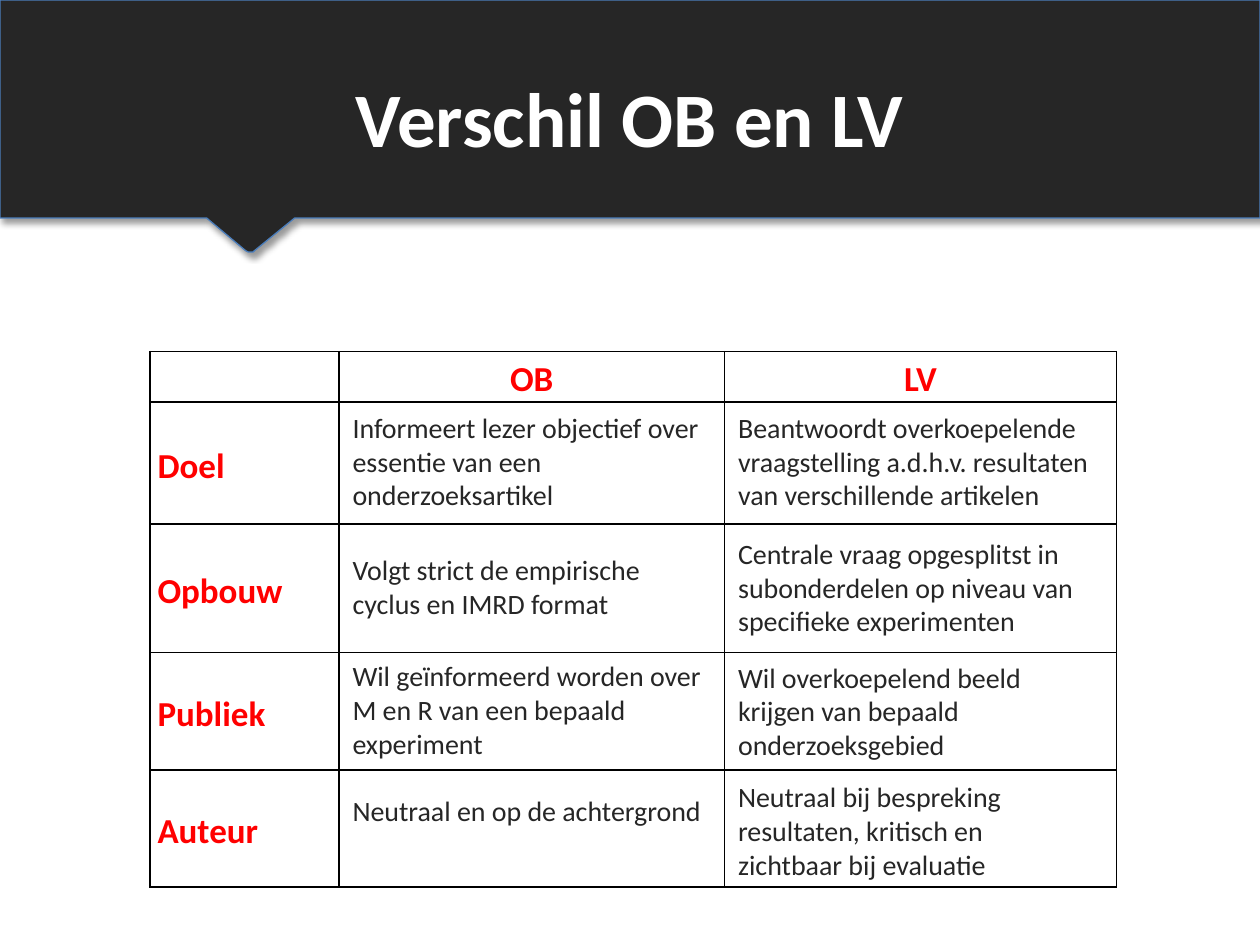
"""Builds a slide that sets OB and LV side by side in a table under a dark banner."""
from dataclasses import dataclass
from typing import Any, NamedTuple

from lxml import etree
from pptx import Presentation, util as u
from pptx.dml.color import RGBColor
from pptx.enum import text
from pptx.oxml.ns import qn


@dataclass(frozen=True)
class Theme:
    """Colours, font and type sizes."""
    dark: str = "262626"
    edge: str = "4B7EBC"
    red: str = "FF0000"
    white: str = "FFFFFF"
    black: str = "000000"
    font: str = "Calibri"
    title: int = 44
    head: int = 20
    body: int = 16


class Note(NamedTuple):
    """A text box: left, top, height and words."""
    left: float
    top: float
    high: float
    words: str


LOOK = Theme()
OB, LV = 2.7, 5.76
COLS = [1.5, 3.06, 3.11]
ROWS = [0.36, 0.97, 1.02, 0.93, 0.93]
HEADS = ["OB", "LV"]
SIDES = ["Doel", "Opbouw", "Publiek", "Auteur"]
EDGE = [(10, 0), (0, 0), (0, 1.73), (1.64, 1.73), (1.95, 1.99), (1.97, 2),
        (2.01, 2), (2.02, 1.99), (2.34, 1.73), (10, 1.73)]
NOTES = [
    Note(OB, 3.21, 0.91, "Informeert lezer objectief over essentie van een onderzoeksartikel"),
    Note(LV, 3.21, 0.91, "Beantwoordt overkoepelende vraagstelling a.d.h.v. resultaten "
                         "van verschillende artikelen"),
    Note(OB, 4.34, 0.64, "Volgt strict de empirische cyclus en IMRD format"),
    Note(LV, 4.21, 0.91, "Centrale vraag opgesplitst in subonderdelen op niveau van "
                         "specifieke experimenten"),
    Note(OB, 5.18, 0.91, "Wil geïnformeerd worden over M en R van een bepaald experiment"),
    Note(LV, 5.19, 0.91, "Wil overkoepelend beeld krijgen van bepaald onderzoeksgebied"),
    Note(OB, 6.25, 0.37, "Neutraal en op de achtergrond"),
    Note(LV, 6.14, 0.91, "Neutraal bij bespreking resultaten, kritisch en zichtbaar "
                         "bij evaluatie"),
]


def put(item: Any, vals: dict[str, Any]) -> None:
    """Set each named value on the item."""
    for name, val in vals.items():
        setattr(item, name, val)


def node(root: Any, tag: str, **vals: str) -> Any:
    """Add a child element with attributes."""
    return etree.SubElement(root, qn(tag), vals)


def write(frame: Any, words: str, size: int, tint: str, bold: bool = False,
          **form: Any) -> None:
    """Write one styled paragraph."""
    para = frame.paragraphs[0]
    put(para, form)
    run = para.add_run()
    run.text = words
    put(run.font, {"name": LOOK.font, "size": u.Pt(size), "bold": bold})
    run.font.color.rgb = RGBColor.from_string(tint)


def banner(slide: Any) -> None:
    """Draw the dark band with its pointer and shadow."""
    pts = [(u.Inches(x), u.Inches(y)) for x, y in EDGE]
    pen = slide.shapes.build_freeform(*pts[0])
    pen.add_line_segments(pts[1:], close=True)
    band = pen.convert_to_shape()
    band.fill.solid()
    band.fill.fore_color.rgb = RGBColor.from_string(LOOK.dark)
    band.line.width = u.Pt(0.75)
    band.line.color.rgb = RGBColor.from_string(LOOK.edge)
    band.shadow.inherit = False
    glow = band._element.spPr.find(qn("a:effectLst"))
    shade = node(glow, "a:outerShdw", blurRad=str(u.Pt(4)), dist=str(u.Pt(3)),
                 dir="2700000", algn="tl", rotWithShape="0")
    tint = node(shade, "a:srgbClr", val=LOOK.black)
    node(tint, "a:alpha", val="40000")


def box(slide: Any, left: float, top: float, wide: float, high: float) -> Any:
    """Add a wrapping text box and return its frame."""
    frame = slide.shapes.add_textbox(
        *(u.Inches(n) for n in (left, top, wide, high))).text_frame
    frame.word_wrap = True
    return frame


def frame_cell(cell: Any) -> None:
    """Clear the fill and draw black borders round a cell."""
    cell.fill.background()
    props = cell._tc.get_or_add_tcPr()
    for spot, side in enumerate("LRTB"):
        line = node(props, f"a:ln{side}", w=str(u.Pt(1)))
        node(node(line, "a:solidFill"), "a:srgbClr", val=LOOK.black)
        props.insert(spot, line)


def label(cell: Any, words: str, **form: Any) -> None:
    """Write a red label in a cell."""
    pad = u.Inches(0.06)
    put(cell, {"margin_left": pad, "margin_right": pad,
               "margin_top": 0, "margin_bottom": 0})
    write(cell.text_frame, words, LOOK.head, LOOK.red, True,
          line_spacing=1.15, **form)


def grid(slide: Any) -> None:
    """Draw the table with its column and row labels."""
    table = slide.shapes.add_table(
        len(ROWS), len(COLS), u.Inches(1.19), u.Inches(2.79),
        u.Inches(sum(COLS)), u.Inches(sum(ROWS))).table
    put(table, {"first_row": False, "horz_banding": False})
    for col, wide in zip(table.columns, COLS):
        col.width = u.Inches(wide)
    for row, high in zip(table.rows, ROWS):
        row.height = u.Inches(high)
    for cell in table.iter_cells():
        frame_cell(cell)
    for col, words in enumerate(HEADS, 1):
        label(table.cell(0, col), words, alignment=text.PP_ALIGN.CENTER)
    for row, words in enumerate(SIDES, 1):
        cell = table.cell(row, 0)
        cell.vertical_anchor = text.MSO_ANCHOR.MIDDLE
        label(cell, words)


def main() -> None:
    """Build and save the slide."""
    deck = Presentation()
    put(deck, {"slide_width": u.Inches(10), "slide_height": u.Inches(7.5)})
    slide = deck.slides.add_slide(deck.slide_layouts[6])
    banner(slide)
    title = box(slide, 0.5, 0.3, 9, 1.25)
    title.vertical_anchor = text.MSO_ANCHOR.MIDDLE
    write(title, "Verschil OB en LV", LOOK.title, LOOK.white, True,
          alignment=text.PP_ALIGN.CENTER)
    grid(slide)
    for note in NOTES:
        frame = box(slide, note.left, note.top, 3, note.high)
        frame.auto_size = text.MSO_AUTO_SIZE.SHAPE_TO_FIT_TEXT
        write(frame, note.words, LOOK.body, LOOK.dark)
    deck.save("out.pptx")


if __name__ == "__main__":
    main()
